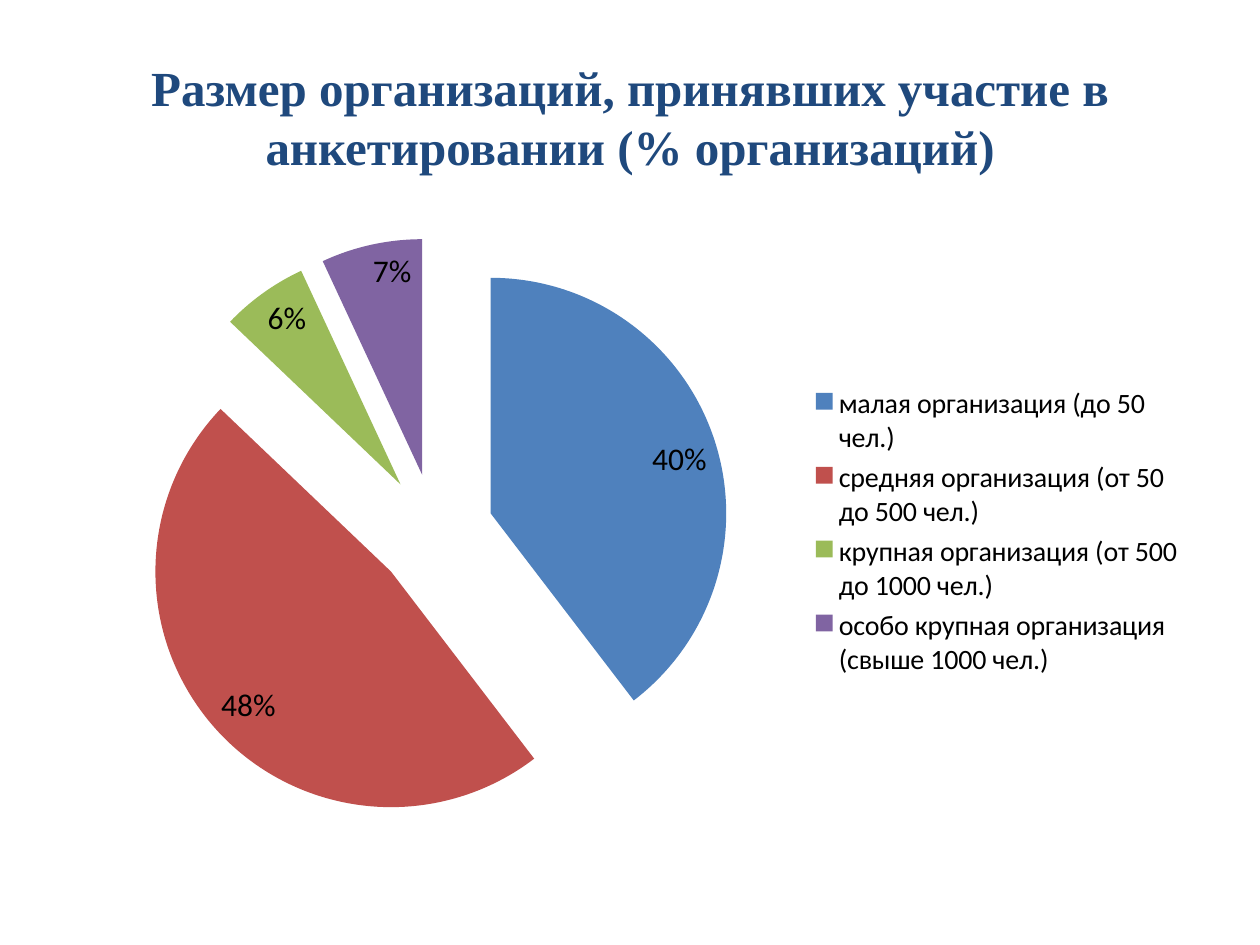
from lxml import etree
from pptx import Presentation
from pptx.chart.data import CategoryChartData
from pptx.dml.color import RGBColor
from pptx.enum.chart import XL_CHART_TYPE, XL_LABEL_POSITION, XL_LEGEND_POSITION
from pptx.enum.text import MSO_ANCHOR, PP_ALIGN
from pptx.oxml.ns import qn
from pptx.util import Inches, Pt

COLORS = {"title": "1F497D", "text": "000000"}
SIZES = {
    "малая организация (до 50 чел.)": (40, "4F81BD"),
    "средняя организация (от 50 до 500 чел.)": (48, "C0504D"),
    "крупная организация (от 500 до 1000 чел.)": (6, "9BBB59"),
    "особо крупная организация (свыше 1000 чел.)": (7, "8064A2"),
}

prs = Presentation()
prs.slide_width, prs.slide_height = Inches(10), Inches(7.5)
s = prs.slides.add_slide(prs.slide_layouts[5])

title = s.shapes.title
title.left, title.top = Inches(0.5), Inches(0.3)
title.width, title.height = Inches(9), Inches(1.25)
tf = title.text_frame
tf.text = "Размер организаций, принявших участие в анкетировании (% организаций)"
tf.word_wrap = True
tf.vertical_anchor = MSO_ANCHOR.MIDDLE
p = tf.paragraphs[0]
p.alignment = PP_ALIGN.CENTER
font = p.runs[0].font
font.name, font.size, font.bold = "Times New Roman", Pt(28), True
font.color.rgb = RGBColor.from_string(COLORS["title"])

data = CategoryChartData()
data.categories = list(SIZES)
data.add_series("Series 1", [value for value, color in SIZES.values()])
chart = s.shapes.add_chart(
    XL_CHART_TYPE.PIE, Inches(0.5), Inches(1.75), Inches(9), Inches(4.95), data
).chart
chart.has_title = False
chart.font.name, chart.font.size = "Calibri", Pt(18)
chart.font.color.rgb = RGBColor.from_string(COLORS["text"])

chart.has_legend = True
chart.legend.position = XL_LEGEND_POSITION.RIGHT
chart.legend.include_in_layout = False
chart.legend.font.size = Pt(16)

plot = chart.plots[0]
plot.vary_by_categories = True
plot.has_data_labels = True
labels = plot.data_labels
labels.show_percentage, labels.show_value = True, False
labels.number_format, labels.number_format_is_linked = "0%", False
labels.position = XL_LABEL_POSITION.INSIDE_END

series = plot.series[0]
explosion = etree.Element(qn("c:explosion"), val="25")
series._element.find(qn("c:tx")).addnext(explosion)
for i, (value, color) in enumerate(SIZES.values()):
    fill = series.points[i].format.fill
    fill.solid()
    fill.fore_color.rgb = RGBColor.from_string(color)

prs.save("out.pptx")
